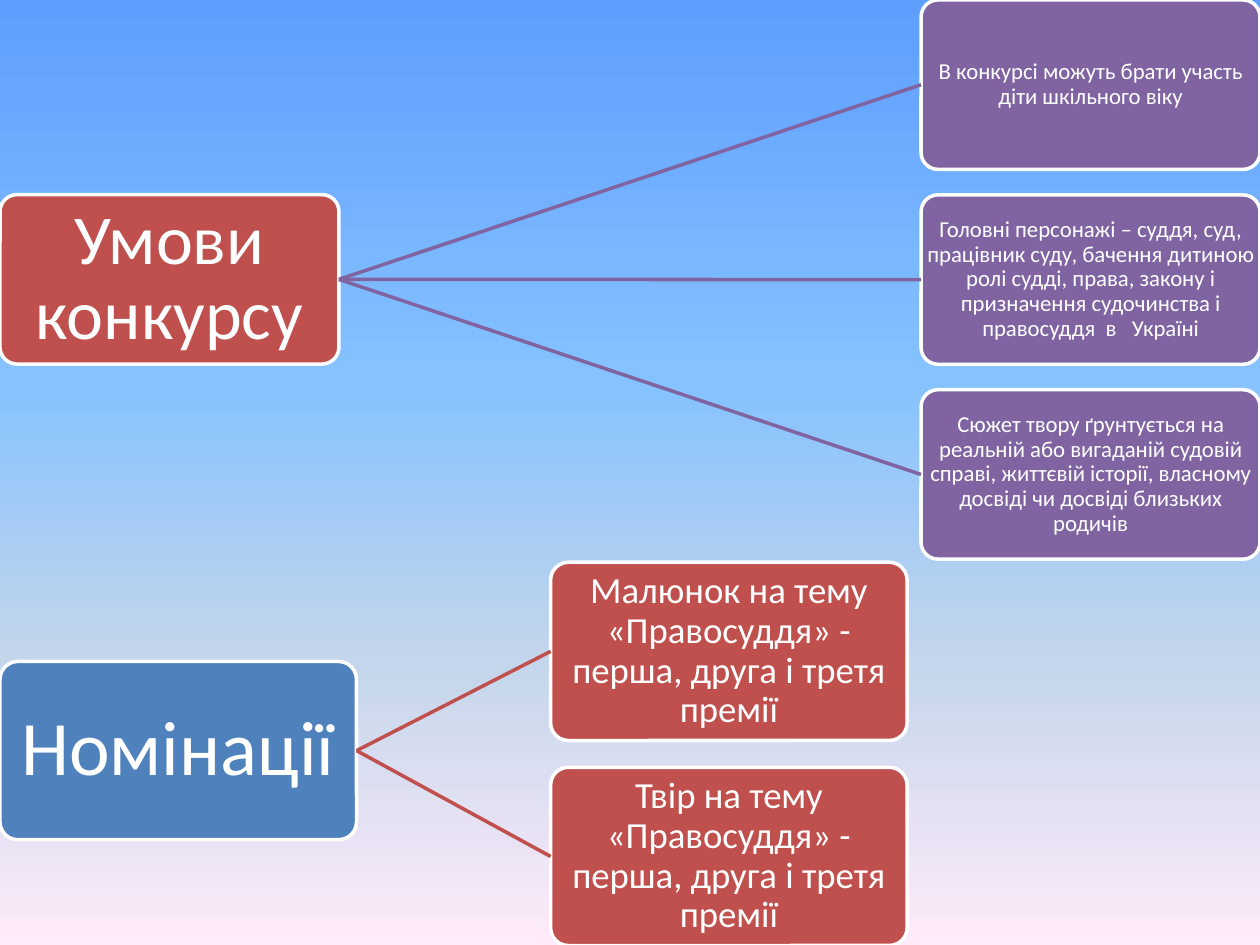
from copy import deepcopy
from dataclasses import dataclass

from pptx import Presentation
from pptx.dml.color import RGBColor
from pptx.enum.shapes import MSO_CONNECTOR as Connector, MSO_SHAPE as Shape
from pptx.enum.text import MSO_ANCHOR as Anchor, PP_ALIGN as Align
from pptx.oxml.ns import qn
from pptx.oxml.xmlchemy import OxmlElement
from pptx.util import Inches, Pt


@dataclass(frozen=True)
class Theme:
    font: str = "Calibri"
    white: str = "FFFFFF"
    red: str = "C0504D"
    purple: str = "8064A2"
    blue: str = "4F81BD"
    sky: tuple = ((0, "5E9EFF"), (0.4, "85C2FF"), (0.7, "C4D6EB"), (1, "FFEBFA"))
    terms_size: int = 40
    awards_size: int = 44
    rule_size: int = 13
    award_size: int = 21
    line_width: int = 2
    corner: float = 0.1
    root_inset: float = 0.03
    leaf_inset: float = 0.01


class Board:
    LEFT_SITE, RIGHT_SITE = 1, 3
    LEAF_PITCH = 1.15

    def __init__(self, deck, theme):
        self.deck = deck
        self.theme = theme
        self.page = deck.slides.add_slide(deck.slide_layouts[6])

    def background(self):
        fill = self.page.background.fill
        fill.gradient()
        fill.gradient_angle = 270
        stop_list = next(self.page.element.iter(qn("a:gsLst")))
        while len(stop_list) < len(self.theme.sky):
            stop_list.append(deepcopy(stop_list[0]))
        for stop, (position, color) in zip(fill.gradient_stops, self.theme.sky):
            stop.position = position
            stop.color.rgb = RGBColor.from_string(color)

    def node(self, left, top, width, text, color, size, inset):
        box_width = int(self.deck.slide_width * width)
        box = self.page.shapes.add_shape(
            Shape.ROUNDED_RECTANGLE,
            int(self.deck.slide_width * left),
            int(self.deck.slide_height * top),
            box_width,
            box_width // 2,
        )
        box.adjustments[0] = self.theme.corner
        box.shadow.inherit = False
        box.fill.solid()
        box.fill.fore_color.rgb = RGBColor.from_string(color)
        box.line.color.rgb = RGBColor.from_string(self.theme.white)
        box.line.width = Pt(self.theme.line_width)
        frame = box.text_frame
        frame.word_wrap = True
        frame.vertical_anchor = Anchor.MIDDLE
        frame.margin_left = frame.margin_right = Inches(inset)
        frame.margin_top = frame.margin_bottom = Inches(inset)
        para = frame.paragraphs[0]
        para.text = text
        para.alignment = Align.CENTER
        para.line_spacing = 0.9
        para.font.name = self.theme.font
        para.font.size = Pt(size)
        para.font.color.rgb = RGBColor.from_string(self.theme.white)
        return box

    def link(self, root, leaf, color):
        line = self.page.shapes.add_connector(Connector.STRAIGHT, 0, 0, 0, 0)
        line.begin_connect(root, self.RIGHT_SITE)
        line.end_connect(leaf, self.LEFT_SITE)
        line.line.color.rgb = RGBColor.from_string(color)
        line.line.width = Pt(self.theme.line_width)
        line.element.spPr.append(OxmlElement("a:effectLst"))

    def tree(self, width, root_top, root, leaf_left, leaf_top, leaves, color, size):
        hub = self.node(0, root_top, width, *root, self.theme.root_inset)
        height = width / 2 * self.deck.slide_width / self.deck.slide_height
        for row, text in enumerate(leaves):
            top = leaf_top + row * height * self.LEAF_PITCH
            leaf = self.node(
                leaf_left, top, width, text, color, size, self.theme.leaf_inset
            )
            self.link(hub, leaf, color)


def main():
    deck = Presentation()
    deck.slide_width, deck.slide_height = Inches(10), Inches(7.5)
    theme = Theme()
    board = Board(deck, theme)
    board.background()
    board.tree(
        width=0.269,
        root_top=0.206,
        root=("Умови конкурсу", theme.red, theme.terms_size),
        leaf_left=0.731,
        leaf_top=0,
        leaves=(
            "В конкурсі можуть брати участь діти шкільного віку",
            "Головні персонажі – суддя, суд, працівник суду, бачення дитиною "
            "ролі судді, права, закону і призначення судочинства і "
            "правосуддя  в   Україні",
            "Сюжет твору ґрунтується на реальній або вигаданій судовій справі, "
            "життєвій історії, власному досвіді чи досвіді близьких родичів",
        ),
        color=theme.purple,
        size=theme.rule_size,
    )
    board.tree(
        width=0.283,
        root_top=0.7,
        root=("Номінації", theme.blue, theme.awards_size),
        leaf_left=0.437,
        leaf_top=0.595,
        leaves=[
            f"{work} на тему «Правосуддя» - перша, друга і третя премії"
            for work in ("Малюнок", "Твір")
        ],
        color=theme.red,
        size=theme.award_size,
    )
    deck.save("out.pptx")


if __name__ == "__main__":
    main()
